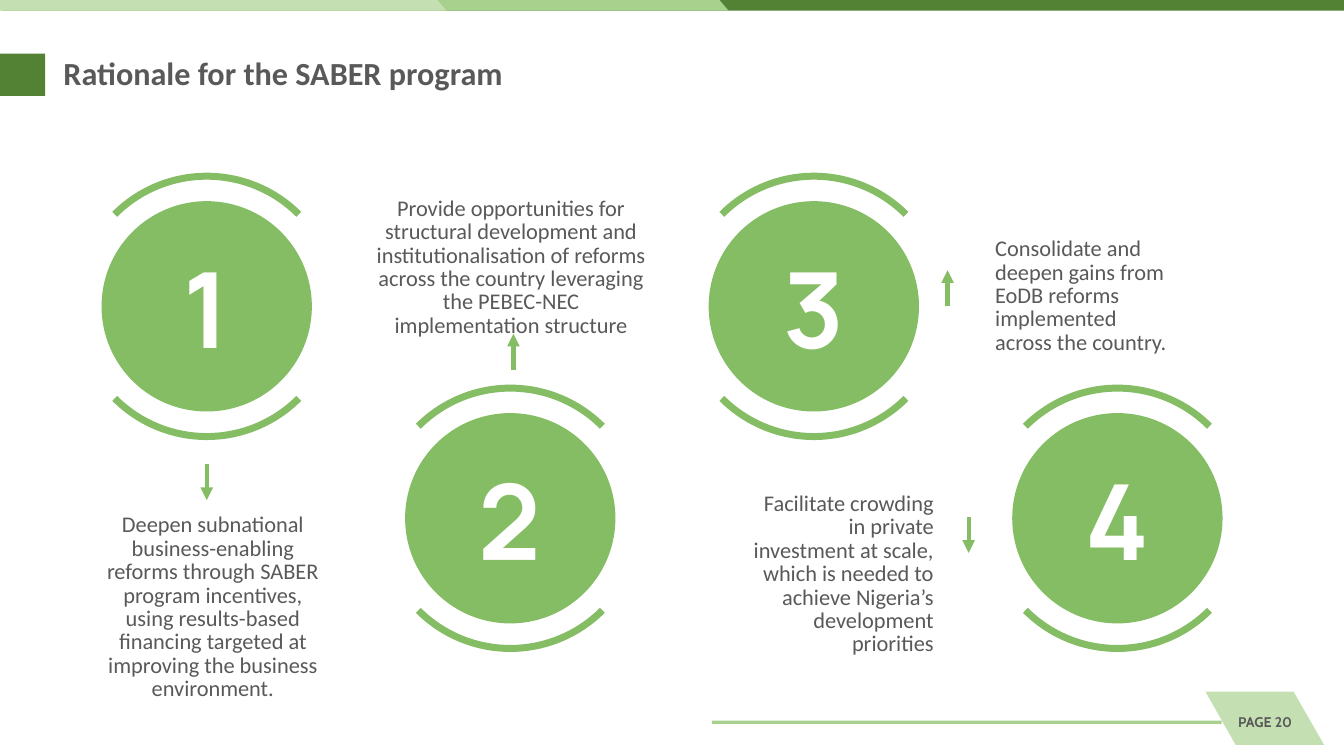
import math

import pptx
import pptx.dml.color
import pptx.enum.shapes
import pptx.enum.text
import pptx.oxml
import pptx.oxml.ns
import pptx.util

Cm = pptx.util.Cm
Pt = pptx.util.Pt
SHAPE = pptx.enum.shapes.MSO_SHAPE
ALIGN = pptx.enum.text.PP_ALIGN
ANCHOR = pptx.enum.text.MSO_ANCHOR
NAMESPACE = pptx.oxml.ns.nsdecls("a")

DARK, MIDDLE, PALE = "548235", "A9D18E", "C4E0B2"
GREEN, GREY, WHITE = "85BD64", "595959", "FFFFFF"


def color(hex_string):
    return pptx.dml.color.RGBColor.from_string(hex_string)


class SlideBuilder:
    """Holds the style and the current slide; all lengths are centimetres."""

    arc_width = 5
    arrow_width = 3
    circle_radius = 2.65
    arc_radius = 3.28

    def __init__(self, slide):
        self.slide = slide

    def paint(self, shape, fill):
        shape.shadow.inherit = False
        shape.fill.solid()
        shape.fill.fore_color.rgb = color(fill)
        shape.line.fill.background()

    def block(self, kind, left, top, width, height, fill):
        shape = self.slide.shapes.add_shape(kind, Cm(left), Cm(top), Cm(width), Cm(height))
        self.paint(shape, fill)

    def outline(self, points, close):
        corners = [(Cm(x), Cm(y)) for x, y in points]
        builder = self.slide.shapes.build_freeform(*corners[0])
        builder.add_line_segments(corners[1:], close=close)
        return builder.convert_to_shape()

    def polygon(self, points, fill):
        self.paint(self.outline(points, True), fill)

    def arc(self, x, y, start):
        """Quarter circle drawn clockwise from the start angle in degrees."""
        radius = self.arc_radius
        angles = [math.radians(start + turn) for turn in (0, 45, 90)]
        points = [(x + radius * math.cos(angle), y + radius * math.sin(angle))
                  for angle in angles]
        shape = self.outline(points, False)

        # Bend the two straight segments into Bezier curves
        handle = radius * 4 / 3 * math.tan(math.radians(45 / 4))
        tangents = [(-handle * math.sin(angle), handle * math.cos(angle)) for angle in angles]
        for index, segment in enumerate(shape._element.xpath(".//a:lnTo")):
            (x1, y1), (x2, y2) = points[index:index + 2]
            (dx1, dy1), (dx2, dy2) = tangents[index:index + 2]
            controls = [(x1 + dx1, y1 + dy1), (x2 - dx2, y2 - dy2), (x2, y2)]
            marks = "".join(f'<a:pt x="{Cm(px) - shape.left}" y="{Cm(py) - shape.top}"/>'
                            for px, py in controls)
            curve = pptx.oxml.parse_xml(f"<a:cubicBezTo {NAMESPACE}>{marks}</a:cubicBezTo>")
            segment.getparent().replace(segment, curve)

        shape.shadow.inherit = False
        shape.fill.background()
        shape.line.color.rgb = color(GREEN)
        shape.line.width = Pt(self.arc_width)

    def text(self, words, left, top, width, height, size, font="Calibri", fill=GREY, bold=False,
             align=ALIGN.LEFT, anchor=ANCHOR.TOP, spacing=1.0, insets=(0.25, 0.13, 0.25, 0.13)):
        box = self.slide.shapes.add_textbox(Cm(left), Cm(top), Cm(width), Cm(height))
        frame = box.text_frame
        frame.word_wrap = True
        frame.vertical_anchor = anchor
        (frame.margin_left, frame.margin_top,
         frame.margin_right, frame.margin_bottom) = [Cm(inset) for inset in insets]
        paragraph = frame.paragraphs[0]
        paragraph.text = words
        paragraph.alignment = align
        paragraph.line_spacing = spacing
        paragraph.font.name = font
        paragraph.font.size = Pt(size)
        paragraph.font.bold = bold
        paragraph.font.color.rgb = color(fill)

    def arrow(self, x, start, end):
        connector = self.slide.shapes.add_connector(
            pptx.enum.shapes.MSO_CONNECTOR.STRAIGHT, Cm(x), Cm(start), Cm(x), Cm(end))
        connector.line.color.rgb = color(GREEN)
        connector.line.width = Pt(self.arrow_width)
        line = connector.line._get_or_add_ln()
        line.append(pptx.oxml.parse_xml(f'<a:tailEnd {NAMESPACE} type="triangle"/>'))
        line.addnext(pptx.oxml.parse_xml(f"<a:effectLst {NAMESPACE}/>"))

    def numbered_circle(self, number, x, y):
        radius = self.circle_radius
        self.block(SHAPE.OVAL, x - radius, y - radius, 2 * radius, 2 * radius, GREEN)
        self.arc(x, y, 225)
        self.arc(x, y, 45)
        self.text(str(number), x - 1.31, y - 1.71, 2.62, 3.45, 75, "Manrope", WHITE, True,
                  ALIGN.CENTER, ANCHOR.MIDDLE)


def main():
    presentation = pptx.Presentation()
    presentation.slide_width = Cm(33.87)
    presentation.slide_height = Cm(19.05)
    builder = SlideBuilder(presentation.slides.add_slide(presentation.slide_layouts[6]))

    # Footer
    builder.polygon([(30.38, 17.43), (32.6, 17.43), (33.37, 18.77), (31.14, 18.77)], PALE)
    builder.block(SHAPE.RECTANGLE, 17.94, 18.16, 12.85, 0.08, MIDDLE)
    builder.text("PAGE 20", 26.36, 17.98, 6.2, 0.48, 10, "Cabin", bold=True,
                 align=ALIGN.RIGHT, anchor=ANCHOR.BOTTOM, insets=(0, 0, 0, 0.05))

    # Header band
    builder.block(SHAPE.RECTANGLE, 0.08, 0, 33.79, 0.27, DARK)
    for left, right, fill in [(0.03, 18.36, MIDDLE), (0, 11.25, PALE)]:
        builder.polygon([(left, 0), (right - 0.23, 0), (right, 0.27), (left, 0.27)], fill)

    # Numbered circles, alternately high and low
    for index in range(4):
        builder.numbered_circle(index + 1, 5.21 + 7.65 * index, 7.72 + 5.34 * (index % 2))

    # Reasons: text, box, alignment
    reasons = [
        ("Deepen subnational business-enabling reforms through SABER program incentives, "
         "using results-based financing targeted at improving the business environment.",
         (2.43, 12.83, 5.87, 4.55), ALIGN.CENTER),
        ("Provide opportunities for structural development and institutionalisation of reforms "
         "across the country leveraging the PEBEC-NEC implementation structure",
         (9.21, 4.85, 7.34, 3.45), ALIGN.CENTER),
        ("Consolidate and deepen gains from EoDB reforms implemented across the country.",
         (24.83, 5.87, 5.08, 2.92), ALIGN.LEFT),
        ("Facilitate crowding in private investment at scale, which is needed to achieve "
         "Nigeria’s development priorities",
         (18.47, 12.29, 5.31, 4.01), ALIGN.RIGHT),
    ]
    for words, box, align in reasons:
        builder.text(words, *box, 16, align=align, spacing=0.87)

    # Arrows between circles and reasons
    for x, start, end in [(5.21, 11.7, 12.6), (12.94, 9.32, 8.41),
                          (23.88, 7.72, 6.81), (24.41, 13.03, 13.93)]:
        builder.arrow(x, start, end)

    # Title
    builder.text("Rationale for the SABER program", 1.35, 1.4, 14.81, 1.04, 23, bold=True,
                 spacing=0.8)
    builder.block(SHAPE.RECTANGLE, 0, 1.35, 1.14, 1.07, DARK)

    presentation.save("out.pptx")


if __name__ == "__main__":
    main()
